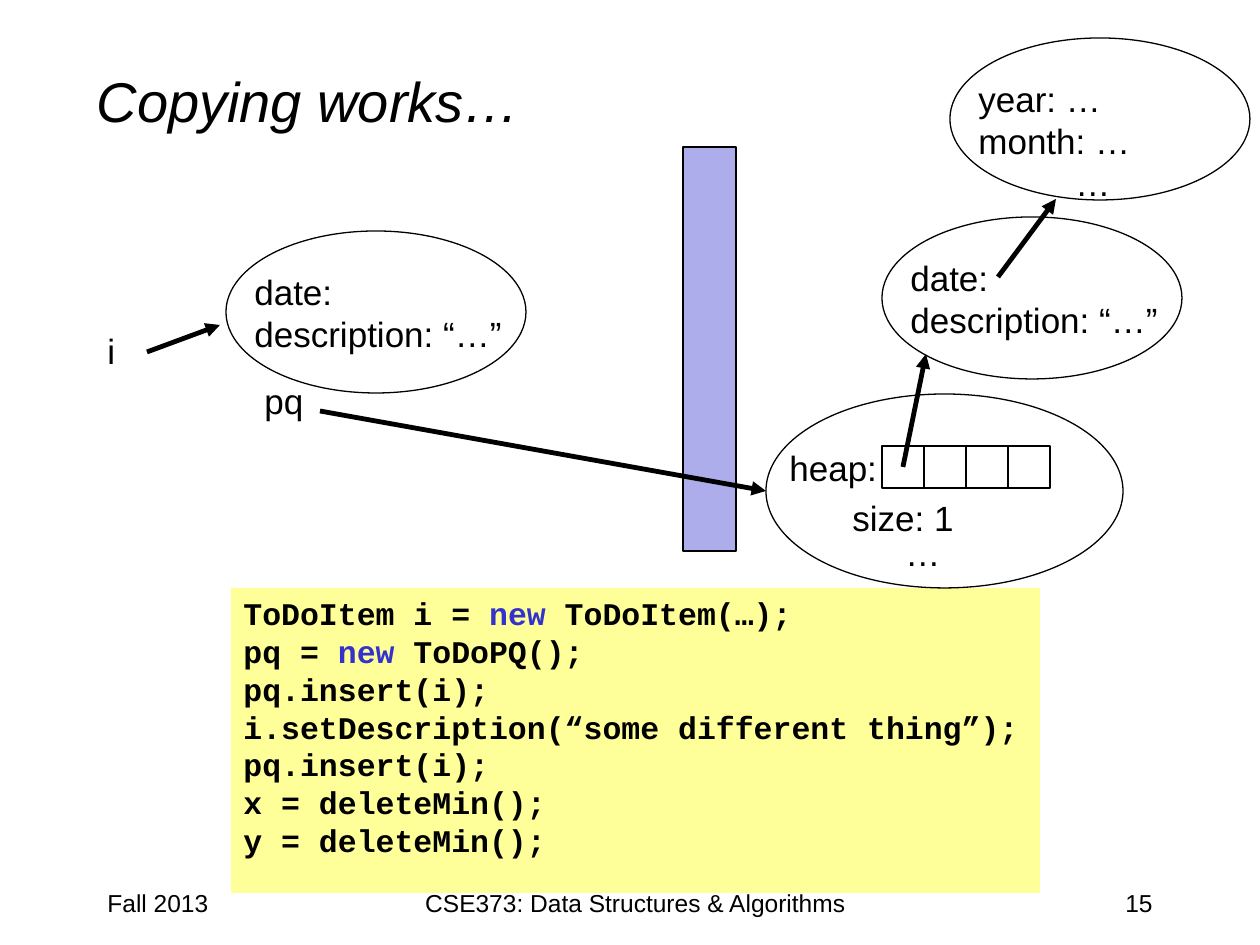
import pptx
import pptx.dml.color
import pptx.enum.shapes
import pptx.enum.text
import pptx.oxml
import pptx.oxml.ns
import pptx.util

SHAPES = pptx.enum.shapes.MSO_SHAPE
ALIGN = pptx.enum.text.PP_ALIGN
ANCHOR = pptx.enum.text.MSO_ANCHOR
EMU_PER_PX = 914400 // 126

THEME = {
    "ink": "000000", "keyword": "3333CC", "code_fill": "FFFF99", "wall": "ADADEB",
    "font": "Arial", "code_font": "Courier New",
    "title": 32, "label": 20, "code": 18, "footer": 14,
    "outline": 0.75, "arrow": 2.75, "line_height": 1.2,
}

# Content: boxes are (left, top, width, height) in px
TITLE = ("Copying works…", (84, 21, 1071, 158))
FOOTERS = [
    ("Fall 2013", (95, 882, 262, 63), ALIGN.LEFT),
    ("15", (903, 882, 262, 63), ALIGN.RIGHT),
    ("CSE373: Data Structures & Algorithms", (399, 882, 473, 63), ALIGN.CENTER),
]
KEYWORD = "new "
CODE_BOX = (231, 588, 809, 305)
CODE = [
    "ToDoItem i = new ToDoItem(…);",
    "pq = new ToDoPQ();",
    "pq.insert(i);",
    "i.setDescription(“some different thing”);",
    "pq.insert(i);",
    "x = deleteMin();",
    "y = deleteMin();",
]
WALL_BOX = (683, 147, 53, 404)
HEAP_BOX = (766, 394, 357, 194)
ARRAY_LEFT, ARRAY_TOP, CELL, CELL_COUNT = 882, 446, 42, 4
LABELS = [
    ("pq", (252, 373, 105, 55)),
    ("heap:", (777, 440, 113, 55)),
    ("size: 1", (840, 490, 136, 55)),
    ("…", (893, 525, 136, 55)),
    ("i", (95, 323, 105, 55)),
]
ITEM = ["date:", "description: “…”"]
OBJECT_SIZE = (300, 162)
OBJECT_TEXT_OFFSET = (16, 33)
OBJECT_TEXT_WIDTH = 314
LAST_LINE_INDENT = 97
OBJECTS = [  # left, top, lines, indent of last line
    (882, 217, ITEM, 0),
    (226, 231, ITEM, 0),
    (950, 38, ["year: …", "month: …", "…"], LAST_LINE_INDENT),
]
ARROWS = [
    ((320, 411), (766, 491)),
    ((903, 467), (926, 354)),
    ((998, 277), (1056, 199)),
    ((147, 352), (220, 325)),
]


def px(*lengths):
    return [pptx.util.Emu(length * EMU_PER_PX) for length in lengths]


def color(name):
    return pptx.dml.color.RGBColor.from_string(THEME[name])


def write_text(shape, lines, size="label", font="font", bold=False, italic=False,
               align=ALIGN.LEFT, anchor=ANCHOR.TOP, wrap=True, keyword=None, last_indent=0):
    """Fill a shape with one paragraph per line, colouring the keyword if given."""
    frame = shape.text_frame
    frame.word_wrap = wrap
    frame.vertical_anchor = anchor
    for index, line in enumerate(lines):
        paragraph = frame.paragraphs[0] if index == 0 else frame.add_paragraph()
        paragraph.alignment = align
        paragraph.line_spacing = pptx.util.Pt(THEME[size] * THEME["line_height"])
        if last_indent and index == len(lines) - 1:
            paragraph._p.get_or_add_pPr().set("marL", str(px(last_indent)[0]))
        for part in line.partition(keyword) if keyword else [line]:
            if not part:
                continue
            run = paragraph.add_run()
            run.text = part
            run.font.name = THEME[font]
            run.font.size = pptx.util.Pt(THEME[size])
            run.font.bold, run.font.italic = bold, italic
            run.font.color.rgb = color("keyword" if part == keyword else "ink")


def add_text(slide, lines, box, **text_format):
    write_text(slide.shapes.add_textbox(*px(*box)), lines, **text_format)


def add_shape(slide, kind, box, fill=None, outlined=True):
    shape = slide.shapes.add_shape(kind, *px(*box))
    shape.shadow.inherit = False
    if fill:
        shape.fill.solid()
        shape.fill.fore_color.rgb = color(fill)
    else:
        shape.fill.background()
    if outlined:
        shape.line.color.rgb = color("ink")
        shape.line.width = pptx.util.Pt(THEME["outline"])
    else:
        shape.line.fill.background()
    return shape


def add_arrow(slide, start, end):
    arrow = slide.shapes.add_connector(
        pptx.enum.shapes.MSO_CONNECTOR.STRAIGHT, *px(*start, *end))
    arrow.line.color.rgb = color("ink")
    arrow.line.width = pptx.util.Pt(THEME["arrow"])
    head = pptx.oxml.parse_xml(f'<a:tailEnd {pptx.oxml.ns.nsdecls("a")} type="triangle"/>')
    arrow.line._get_or_add_ln().append(head)
    effects = pptx.oxml.parse_xml(f'<a:effectLst {pptx.oxml.ns.nsdecls("a")}/>')
    arrow._element.spPr.append(effects)


def main():
    presentation = pptx.Presentation()
    presentation.slide_width, presentation.slide_height = px(1260, 945)
    slide = presentation.slides.add_slide(presentation.slide_layouts[5])

    title_text, title_box = TITLE
    title = slide.shapes.title
    title.left, title.top, title.width, title.height = px(*title_box)
    write_text(title, [title_text], size="title", italic=True, anchor=ANCHOR.MIDDLE)

    for text, box, align in FOOTERS:
        add_text(slide, [text], box, size="footer", align=align)

    code_box = add_shape(slide, SHAPES.RECTANGLE, CODE_BOX, fill="code_fill", outlined=False)
    write_text(code_box, CODE, size="code", font="code_font", bold=True, keyword=KEYWORD)

    add_shape(slide, SHAPES.RECTANGLE, WALL_BOX, fill="wall")
    for index in range(CELL_COUNT):
        add_shape(slide, SHAPES.RECTANGLE, (ARRAY_LEFT + index * CELL, ARRAY_TOP, CELL, CELL))
    add_shape(slide, SHAPES.OVAL, HEAP_BOX)

    for text, box in LABELS:
        add_text(slide, [text], box, wrap=text != "heap:")

    offset_x, offset_y = OBJECT_TEXT_OFFSET
    for left, top, lines, indent in OBJECTS:
        add_shape(slide, SHAPES.OVAL, (left, top, *OBJECT_SIZE))
        text_height = 13 + 42 * len(lines)
        text_box = (left + offset_x, top + offset_y, OBJECT_TEXT_WIDTH, text_height)
        add_text(slide, lines, text_box, last_indent=indent)

    for start, end in ARROWS:
        add_arrow(slide, start, end)

    presentation.save("out.pptx")


if __name__ == "__main__":
    main()
